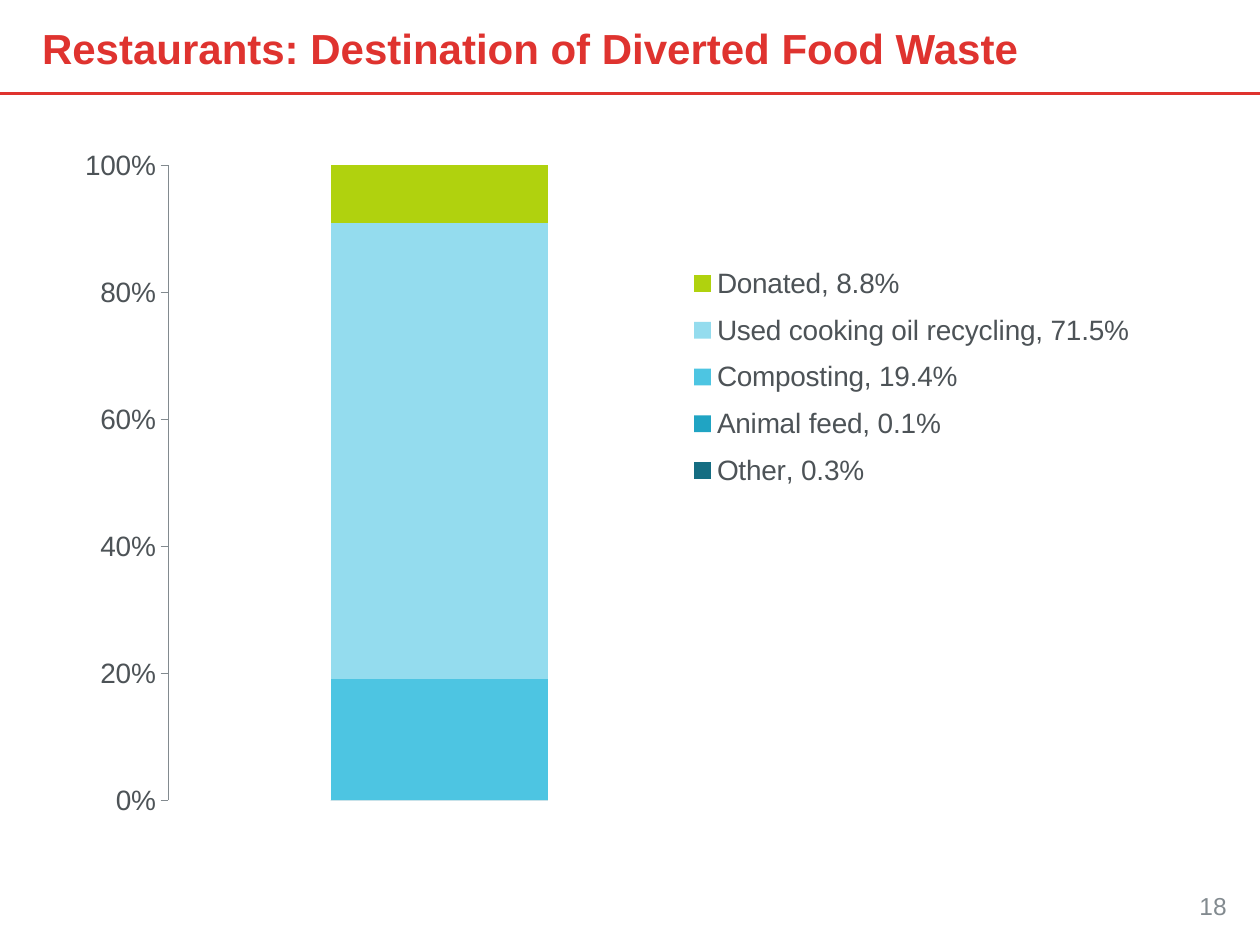
from lxml.etree import SubElement
from pptx import Presentation
from pptx.chart.data import CategoryChartData
from pptx.dml.color import RGBColor
from pptx.enum.chart import XL_CHART_TYPE, XL_LEGEND_POSITION, XL_TICK_MARK
from pptx.enum.shapes import MSO_CONNECTOR
from pptx.enum.text import MSO_ANCHOR, PP_ALIGN
from pptx.oxml.ns import qn
from pptx.util import Pt

FONT = "Arial"
RED, GREY, TEXT = "DF332F", "828A8F", "4D5357"
DESTINATIONS = [
    ("Other, 0.3%", 0, "156D82"),
    ("Animal feed, 0.1%", 0, "20A4C3"),
    ("Composting, 19.4%", 19, "4DC5E2"),
    ("Used cooking oil recycling, 71.5%", 71, "94DCEE"),
    ("Donated, 8.8%", 9, "B0D20E"),
]


def color(value):
    return RGBColor.from_string(value)


def style(font, size, value, bold=False):
    font.name, font.size, font.bold = FONT, Pt(size), bold
    font.color.rgb = color(value)


def fill_text(shape, text, size, value, align, anchor, bold=False):
    frame = shape.text_frame
    frame.margin_left = frame.margin_right = 0
    frame.margin_top = frame.margin_bottom = 0
    frame.word_wrap = True
    frame.vertical_anchor = anchor
    frame.text = text
    para = frame.paragraphs[0]
    para.alignment = align
    style(para.runs[0].font, size, value, bold)


def add_heading(page, left, top, width, height):
    title = page.shapes.title
    title.left, title.top, title.width, title.height = map(Pt, (left, top, width, height))
    fill_text(title, "Restaurants: Destination of Diverted Food Waste", 24, RED,
              PP_ALIGN.LEFT, MSO_ANCHOR.MIDDLE, bold=True)


def add_rule(page, left, top, width):
    rule = page.shapes.add_connector(
        MSO_CONNECTOR.STRAIGHT, Pt(left), Pt(top), Pt(left + width), Pt(top))
    rule.line.color.rgb = color(RED)
    rule.line.width = Pt(1.5)
    SubElement(rule._element.spPr, qn("a:effectLst"))


def add_page_number(page, left, top, width, height):
    box = page.shapes.add_textbox(Pt(left), Pt(top), Pt(width), Pt(height))
    fill_text(box, "18", 14, GREY, PP_ALIGN.RIGHT, MSO_ANCHOR.TOP)


def set_layout(parent, index, box, chart_size, inner=False):
    """Place a chart part at a box in points, measured within the chart."""
    for old in parent.findall(qn("c:layout")):
        parent.remove(old)
    layout = SubElement(parent, qn("c:layout"))
    parent.insert(index, layout)
    manual = SubElement(layout, qn("c:manualLayout"))
    settings = [("layoutTarget", "inner")] if inner else []
    settings += [("xMode", "edge"), ("yMode", "edge")]
    settings += [(name, length / whole)
                 for name, length, whole in zip("xywh", box, chart_size * 2)]
    for name, value in settings:
        SubElement(manual, qn(f"c:{name}")).set("val", str(value))


def add_destination_chart(page, left, top, width, height):
    data = CategoryChartData()
    data.categories = ["1"]
    for name, share, _ in DESTINATIONS:
        data.add_series(name, [share])
    chart = page.shapes.add_chart(
        XL_CHART_TYPE.COLUMN_STACKED_100,
        Pt(left), Pt(top), Pt(width), Pt(height), data).chart
    style(chart.font, 10, TEXT)
    chart.has_title = False

    plot = chart.plots[0]
    plot.gap_width, plot.overlap, plot.vary_by_categories = 150, 100, False
    for series, (_, _, value) in zip(plot.series, DESTINATIONS):
        series.format.fill.solid()
        series.format.fill.fore_color.rgb = color(value)

    chart.category_axis.visible = False
    axis = chart.value_axis
    axis.has_major_gridlines = False
    axis.major_tick_mark = XL_TICK_MARK.OUTSIDE
    axis.minimum_scale, axis.maximum_scale, axis.major_unit = 0, 1, 0.2
    axis.tick_labels.number_format = "0%"
    axis.tick_labels.number_format_is_linked = False
    axis.format.line.color.rgb = color(GREY)
    axis.format.line.width = Pt(0.25)
    style(axis.tick_labels.font, 16, TEXT)

    chart.has_legend = True
    legend = chart.legend
    legend.position = XL_LEGEND_POSITION.RIGHT
    legend.include_in_layout = False
    style(legend.font, 16, TEXT)

    plot_area = chart._chartSpace.chart.plotArea
    size = (width, height)
    set_layout(plot_area, 0, (60, 16.5, 310, 363), size, inner=True)
    set_layout(legend._element, 1, (349, 66, 272, 143), size)


def main():
    deck = Presentation()
    deck.slide_width, deck.slide_height = Pt(720), Pt(540)
    page = deck.slides.add_slide(deck.slide_layouts[5])
    add_rule(page, 0, 53.3, 720)
    add_heading(page, 24, 0, 670, 54)
    add_page_number(page, 533, 509, 168, 24)
    add_destination_chart(page, 36, 78, 648, 396)
    deck.save("out.pptx")


if __name__ == "__main__":
    main()
